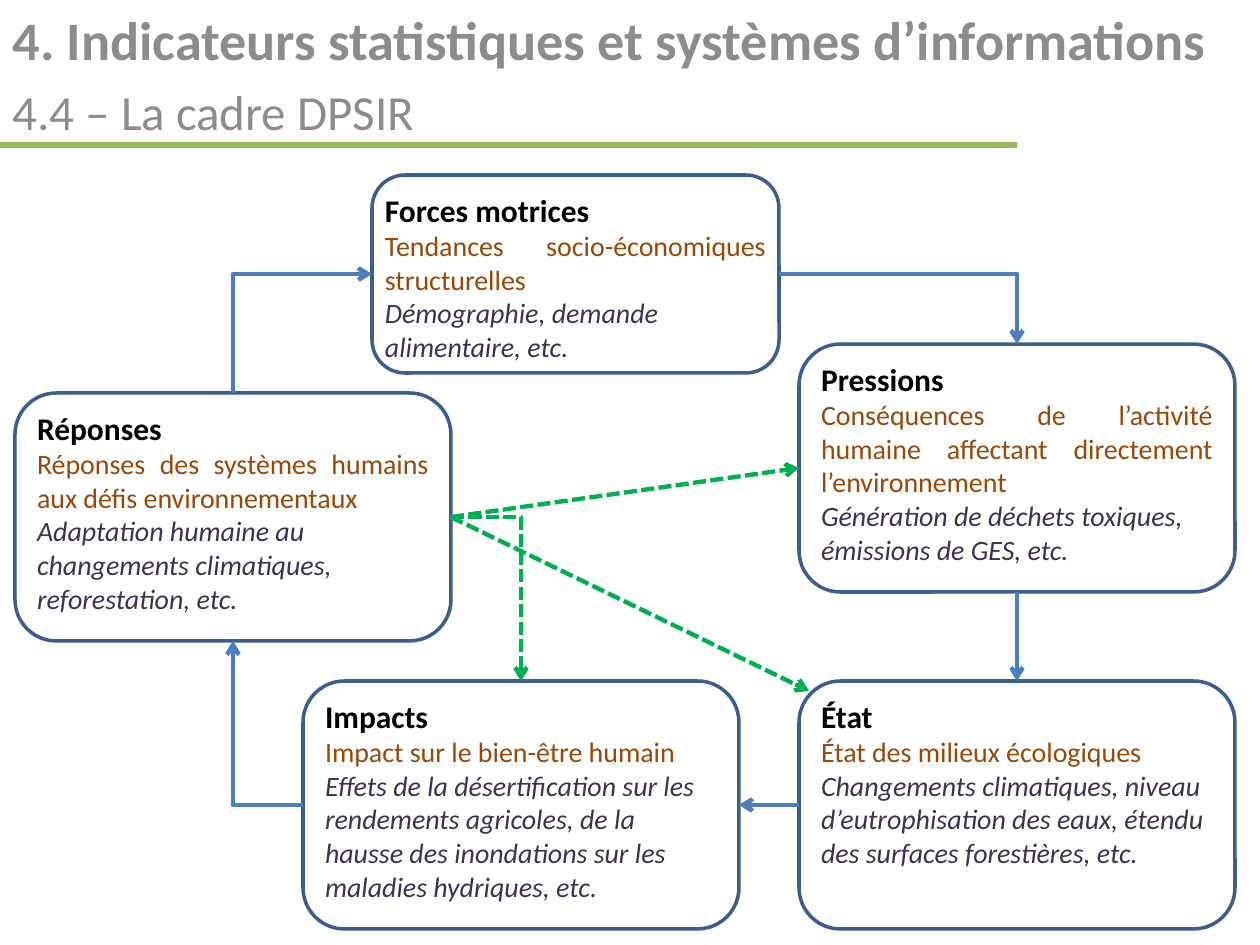
from dataclasses import dataclass

from lxml import etree
from pptx import Presentation
from pptx.dml.color import RGBColor
from pptx.enum.dml import MSO_LINE
from pptx.enum.shapes import MSO_CONNECTOR, MSO_SHAPE
from pptx.enum.text import MSO_ANCHOR, MSO_AUTO_SIZE, PP_ALIGN
from pptx.oxml.ns import qn
from pptx.util import Emu, Pt

ROUNDED = MSO_SHAPE.ROUNDED_RECTANGLE
STRAIGHT, ELBOW = MSO_CONNECTOR.STRAIGHT, MSO_CONNECTOR.ELBOW
DASHED = MSO_LINE.SQUARE_DOT
LEFT, JUSTIFIED = PP_ALIGN.LEFT, PP_ALIGN.JUSTIFY
TOP, NO_FIT = MSO_ANCHOR.TOP, MSO_AUTO_SIZE.NONE
TOP_SITE, LEFT_SITE, BOTTOM_SITE, RIGHT_SITE = range(4)
PX_PER_INCH = 126
CORNER_INSET = 0.0488


@dataclass(frozen=True)
class Theme:
    """Colours, type sizes and line widths of the slide."""
    font: str = "Calibri"
    title: str = "8C8C8C"
    rule: str = "98B955"
    outline: str = "3A5F8C"
    flow: str = "4B7EBC"
    feedback: str = "00B050"
    heading: str = "000000"
    definition: str = "984807"
    example: str = "403152"
    title_size: int = 31
    subtitle_size: int = 28
    heading_size: int = 18
    body_size: int = 16
    rule_width: float = 3
    outline_width: float = 2
    arrow_width: float = 2.5


@dataclass(frozen=True)
class Stage:
    """One box of the DPSIR cycle, in px."""
    heading: str
    definition: str
    example: str
    x: int
    y: int
    width: int = 436
    height: int = 248
    padding: int = 22


@dataclass(frozen=True)
class Link:
    """An arrow between two stages, glued to their sides."""
    source: str
    source_site: int
    target: str
    target_site: int
    route: int = STRAIGHT
    feedback: bool = False
    arrow_end: str = "tailEnd"


THEME = Theme()
STAGES = (
    Stage("Forces motrices", "Tendances socio-économiques structurelles",
          "Démographie, demande alimentaire, etc.", 372, 175, 407, 198, 13),
    Stage("Pressions",
          "Conséquences de l’activité humaine affectant directement l’environnement",
          "Génération de déchets toxiques, émissions de GES, etc.", 799, 344),
    Stage("État", "État des milieux écologiques",
          "Changements climatiques, niveau d’eutrophisation des eaux, "
          "étendu des surfaces forestières, etc.", 799, 681),
    Stage("Impacts", "Impact sur le bien-être humain",
          "Effets de la désertification sur les rendements agricoles, de la "
          "hausse des inondations sur les maladies hydriques, etc.", 303, 681),
    Stage("Réponses", "Réponses des systèmes humains aux défis environnementaux",
          "Adaptation humaine au changements climatiques, reforestation, etc.", 15, 393),
)
LINKS = (
    Link("Forces motrices", RIGHT_SITE, "Pressions", TOP_SITE, ELBOW),
    Link("Pressions", BOTTOM_SITE, "État", TOP_SITE),
    Link("État", LEFT_SITE, "Impacts", RIGHT_SITE),
    Link("Impacts", LEFT_SITE, "Réponses", BOTTOM_SITE, ELBOW),
    Link("Forces motrices", LEFT_SITE, "Réponses", TOP_SITE, ELBOW, arrow_end="headEnd"),
    Link("Réponses", RIGHT_SITE, "Impacts", TOP_SITE, ELBOW, feedback=True),
    Link("Réponses", RIGHT_SITE, "Pressions", LEFT_SITE, feedback=True),
)


def px(length: float) -> Emu:
    """Turn px into EMU."""
    return Emu(round(length * 914400 / PX_PER_INCH))


def apply(target, formats: dict) -> None:
    """Set each attribute named in the dict."""
    for attribute, value in formats.items():
        setattr(target, attribute, value)


def write(paragraph, wording: str, size: int, color: str, align=LEFT, **style) -> None:
    """Write one formatted run into a paragraph."""
    paragraph.alignment = align
    run = paragraph.add_run()
    run.text = wording
    apply(run.font, {"name": THEME.font, "size": Pt(size), **style})
    run.font.color.rgb = RGBColor.from_string(color)


def draw_title(slide) -> None:
    """Place the heading lines in the title placeholder, with the rule below."""
    title = slide.shapes.title
    apply(title, {"left": px(0), "top": px(0), "width": px(1235), "height": px(145)})
    frame = title.text_frame
    apply(frame, {"vertical_anchor": TOP, "auto_size": NO_FIT, "word_wrap": True})
    chapter, section = frame.paragraphs[0], frame.add_paragraph()
    write(chapter, "4. Indicateurs statistiques et systèmes d’informations",
          THEME.title_size, THEME.title, bold=True)
    write(section, "4.4 – La cadre DPSIR", THEME.subtitle_size, THEME.title, bold=False)
    for line in (chapter, section):
        line.space_before = Pt(6)
    rule = slide.shapes.add_connector(STRAIGHT, px(0), px(145), px(1017), px(145))
    style_line(rule, THEME.rule, THEME.rule_width)


def draw_stage(slide, stage: Stage):
    """Draw one rounded box holding its three paragraphs."""
    box = slide.shapes.add_shape(
        ROUNDED, px(stage.x), px(stage.y), px(stage.width), px(stage.height))
    box.shadow.inherit = False
    box.fill.background()
    box.line.color.rgb = RGBColor.from_string(THEME.outline)
    box.line.width = Pt(THEME.outline_width)
    inset = CORNER_INSET * stage.height
    side = px(stage.padding - inset)
    frame = box.text_frame
    apply(frame, {"word_wrap": True, "vertical_anchor": TOP, "margin_left": side,
                  "margin_right": side, "margin_top": px(16 - inset), "margin_bottom": 0})
    write(frame.paragraphs[0], stage.heading, THEME.heading_size, THEME.heading, bold=True)
    write(frame.add_paragraph(), stage.definition, THEME.body_size, THEME.definition, JUSTIFIED)
    write(frame.add_paragraph(), stage.example, THEME.body_size, THEME.example, italic=True)
    return box


def style_line(connector, color: str, width: float, dash=None, arrow_end: str = "") -> None:
    """Format a connector, with an arrowhead if an end is named."""
    connector.line.color.rgb = RGBColor.from_string(color)
    apply(connector.line, {"width": Pt(width), "dash_style": dash})
    properties = connector._element.spPr
    if arrow_end:
        etree.SubElement(properties.find(qn("a:ln")), qn(f"a:{arrow_end}"), type="arrow")
    etree.SubElement(properties, qn("a:effectLst"))


def style_arrow(connector, feedback: bool, arrow_end: str = "tailEnd") -> None:
    """Format an arrow as part of the cycle or as feedback."""
    color, dash = (THEME.feedback, DASHED) if feedback else (THEME.flow, None)
    style_line(connector, color, THEME.arrow_width, dash, arrow_end)


def draw_link(slide, link: Link, boxes: dict) -> None:
    """Join two boxes by a straight or single-bend arrow."""
    arrow = slide.shapes.add_connector(link.route, 0, 0, 0, 0)
    arrow.begin_connect(boxes[link.source], link.source_site)
    arrow.end_connect(boxes[link.target], link.target_site)
    if link.route == ELBOW:
        arrow._element.spPr.find(qn("a:prstGeom")).set("prst", "bentConnector2")
    style_arrow(arrow, link.feedback, link.arrow_end)


def main() -> None:
    """Build the slide and save it."""
    deck = Presentation()
    apply(deck, {"slide_width": px(1260), "slide_height": px(945)})
    slide = deck.slides.add_slide(deck.slide_layouts[5])
    draw_title(slide)
    boxes = {stage.heading: draw_stage(slide, stage) for stage in STAGES}
    for link in LINKS:
        draw_link(slide, link, boxes)
    state_feedback = slide.shapes.add_connector(STRAIGHT, px(451), px(517), px(809), px(691))
    style_arrow(state_feedback, feedback=True)
    deck.save("out.pptx")


if __name__ == "__main__":
    main()
